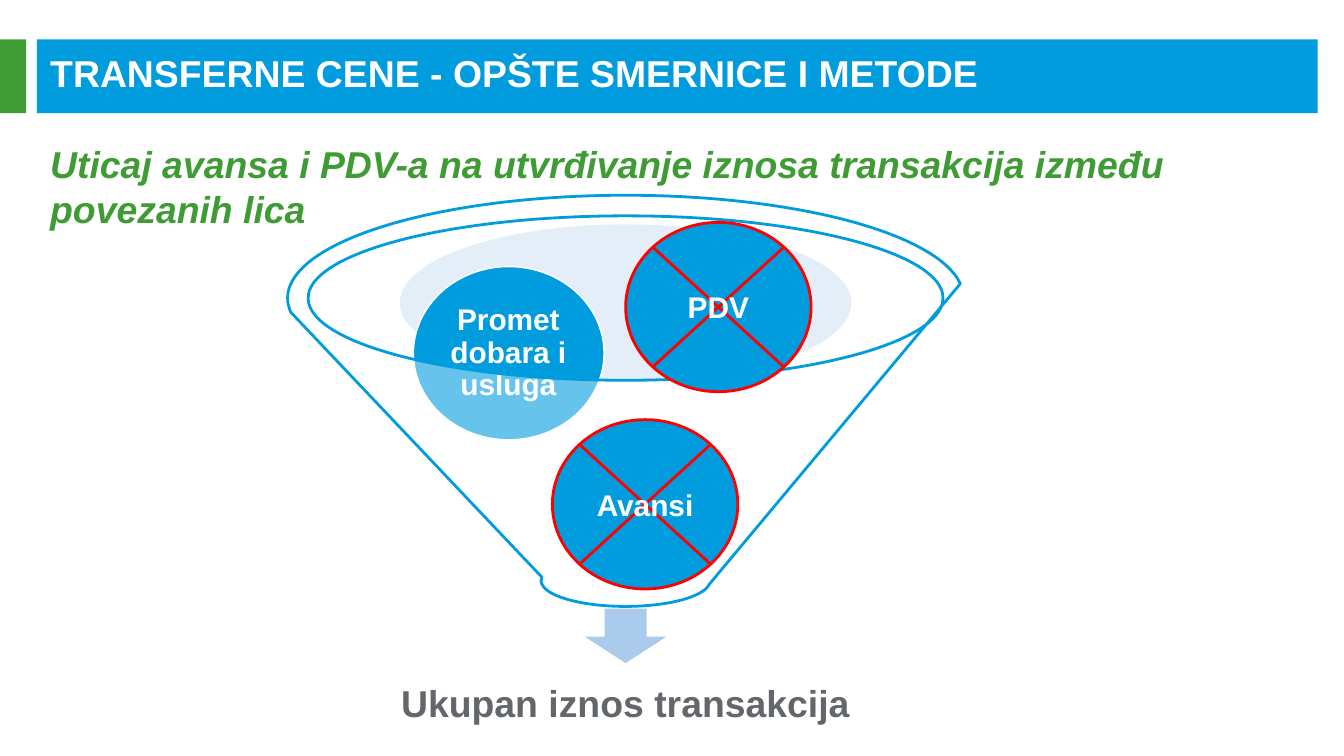
from dataclasses import dataclass

from lxml import etree
from pptx import Presentation
from pptx.dml.color import RGBColor as Rgb
from pptx.enum.shapes import MSO_SHAPE as Kind
from pptx.enum.text import MSO_ANCHOR as Anchor, PP_ALIGN as Align
from pptx.oxml.ns import qn
from pptx.util import Inches, Pt

COLS, ROWS = 100, 56.25  # 16:9 grid of square cells
CELL = Inches(10) / COLS


@dataclass(frozen=True)
class Theme:
    font: str = "Arial"
    blue: str = "009CDE"
    green: str = "3F9C35"
    white: str = "FFFFFF"
    pale: str = "BDD5EF"
    soft: str = "ABCBEC"
    gray: str = "63666A"
    red: str = "FF0000"
    head: int = 20
    label: int = 16
    thin: float = 0.85
    thick: float = 1.5


T = Theme()


def grid(*cells):
    return [round(n * CELL) for n in cells]


def add_shape(slide, kind, box, fill, line=None, width=T.thin, alpha=None):
    shape = slide.shapes.add_shape(kind, *grid(*box))
    shape.shadow.inherit = False
    shape.fill.solid()
    shape.fill.fore_color.rgb = Rgb.from_string(fill)
    if alpha is not None:
        color = shape.element.spPr.find(qn("a:solidFill"))[0]
        etree.SubElement(color, qn("a:alpha")).set("val", str(alpha * 1000))
    if line:
        shape.line.color.rgb = Rgb.from_string(line)
        shape.line.width = Pt(width)
    else:
        shape.line.fill.background()
    return shape


def write(shape, text, size, color, align=Align.CENTER, anchor=Anchor.MIDDLE,
          inset=None, space=None, italic=None):
    frame = shape.text_frame
    frame.word_wrap = True
    frame.vertical_anchor = anchor
    if inset is not None:
        pad, = grid(inset)
        frame.margin_left = frame.margin_right = pad
        frame.margin_top = frame.margin_bottom = pad
    para = frame.paragraphs[0]
    para.alignment = align
    para.line_spacing = space
    run = para.add_run()
    run.text = text
    font = run.font
    font.name, font.size = T.font, Pt(size)
    font.bold, font.italic = True, italic
    font.color.rgb = Rgb.from_string(color)


def add_text(slide, box, *args, **style):
    write(slide.shapes.add_textbox(*grid(*box)), *args, **style)


def add_cross(slide, left, top, text):
    shape = add_shape(slide, Kind.FLOWCHART_SUMMING_JUNCTION,
                      (left, top, 13.8, 12.6), T.blue, T.red, T.thick)
    write(shape, text, T.label, T.white)


def add_head(slide):
    add_shape(slide, Kind.RECTANGLE, (2.75, 2.93, 95.3, 5.5), T.blue)
    add_shape(slide, Kind.RECTANGLE, (0, 2.93, 1.95, 5.5), T.green)
    add_text(slide, (2.75, 3.9, 94.5, 3),
             "TRANSFERNE CENE - OPŠTE SMERNICE I METODE",
             T.head, T.white, align=Align.LEFT)
    add_text(slide, (2.75, 10, 95.3, 5.3),
             "Uticaj avansa i PDV-a na utvrđivanje iznosa transakcija "
             "između povezanih lica",
             T.head, T.green, align=Align.LEFT, anchor=Anchor.TOP, italic=True)


def add_funnel(slide):
    # Mouth, outlet and result
    add_shape(slide, Kind.OVAL, (29.75, 16.7, 33.6, 11.7), T.pale, alpha=40)
    add_shape(slide, Kind.DOWN_ARROW, (43.3, 45.22, 6.5, 4.2), T.soft, T.white)
    add_text(slide, (15.7, 48.6, 61.7, 7.8), "Ukupan iznos transakcija",
             T.head, T.gray, inset=1.6, space=0.9)
    # Item that counts, partly veiled by the funnel
    add_shape(slide, Kind.OVAL, (30.75, 19.83, 14.2, 12.9), T.blue, T.white)
    add_text(slide, (32.83, 21.7, 10, 9.2), "Promet dobara i usluga",
             T.label, T.white, inset=0.2, space=0.9)
    add_shape(slide, Kind.FUNNEL, (21.4, 14.53, 50.3, 30.6), T.white,
              T.blue, T.thick, alpha=40)
    # Items left out
    add_cross(slide, 46.55, 16.55, "PDV")
    add_cross(slide, 41.1, 31.23, "Avansi")


def main():
    deck = Presentation()
    deck.slide_width, deck.slide_height = grid(COLS, ROWS)
    slide = deck.slides.add_slide(deck.slide_layouts[6])
    add_head(slide)
    add_funnel(slide)
    deck.save("out.pptx")


if __name__ == "__main__":
    main()
